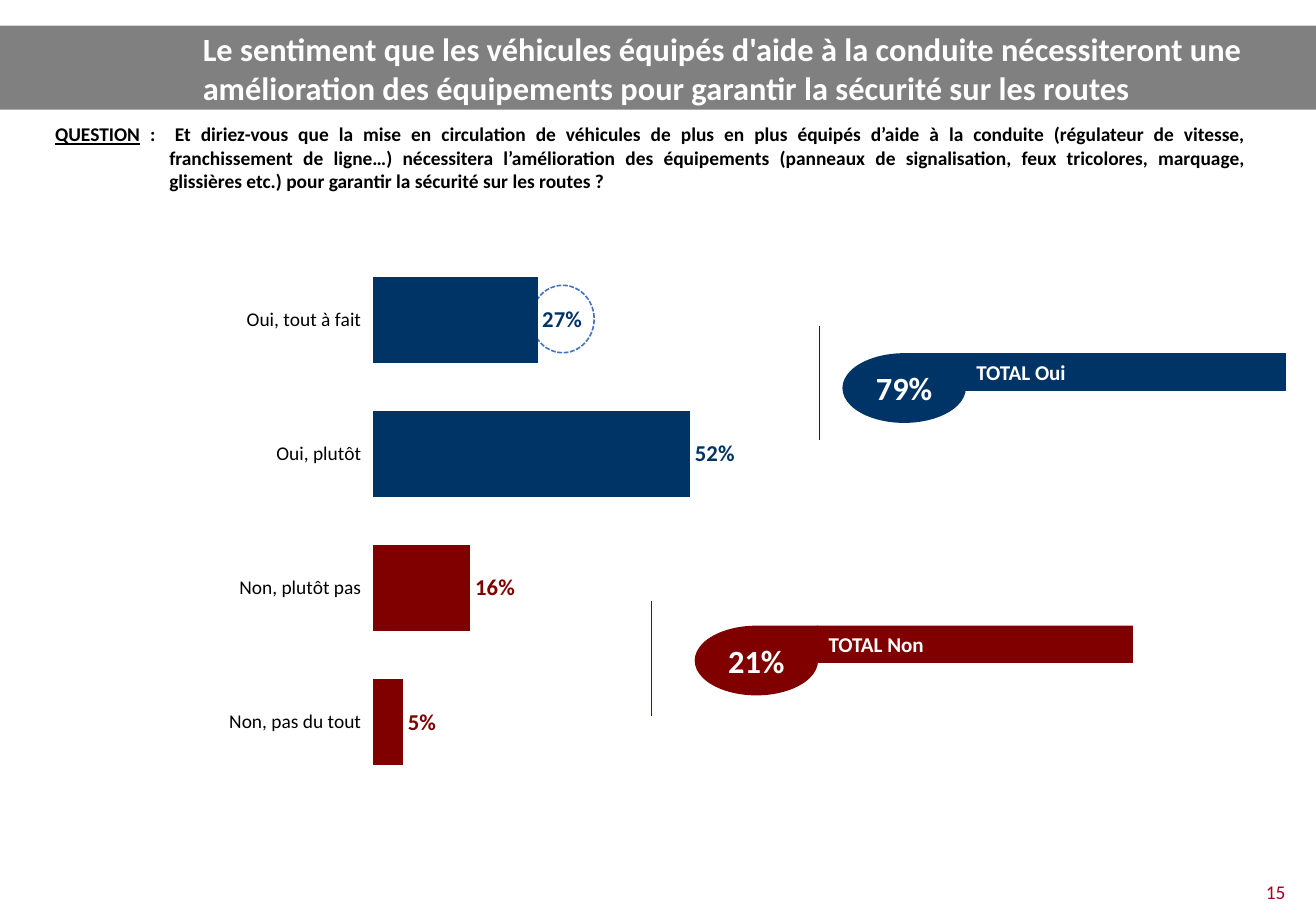
from lxml import etree
from pptx import Presentation
from pptx.chart.data import CategoryChartData as Data
from pptx.dml.color import RGBColor
from pptx.enum.chart import XL_CHART_TYPE as Kind, XL_LABEL_POSITION as Pos, XL_TICK_MARK as Tick
from pptx.enum.dml import MSO_LINE as Dash
from pptx.enum.shapes import MSO_CONNECTOR as Link, MSO_SHAPE as Form
from pptx.enum.text import MSO_ANCHOR as Anchor, PP_ALIGN as Align
from pptx.oxml import parse_xml
from pptx.oxml.ns import qn
from pptx.util import Cm, Pt

NAVY = RGBColor(0x00, 0x33, 0x66)
INK = RGBColor(0x00, 0x20, 0x60)
RED = RGBColor(0x80, 0x00, 0x00)
ROSE = RGBColor(0xA5, 0x00, 0x21)
BLUE = RGBColor(0x44, 0x72, 0xC4)
GREY = RGBColor(0x80, 0x80, 0x80)
WHITE = RGBColor(0xFF, 0xFF, 0xFF)
BLACK = RGBColor(0x00, 0x00, 0x00)

TITLE = ("Le sentiment que les véhicules équipés d'aide à la conduite nécessiteront une "
         "amélioration des équipements pour garantir la sécurité sur les routes")
QUERY = (" :\tEt diriez-vous que la mise en circulation de véhicules de plus en plus équipés "
         "d’aide à la conduite (régulateur de vitesse, franchissement de ligne…) nécessitera "
         "l’amélioration des équipements (panneaux de signalisation, feux tricolores, marquage, "
         "glissières etc.) pour garantir la sécurité sur les routes ?")
BARS = [("Oui, tout à fait", 0.27, NAVY), ("Oui, plutôt", 0.52, NAVY),
        ("Non, plutôt pas", 0.16, RED), ("Non, pas du tout", 0.05, RED)]
PLOT = {"xMode": "edge", "yMode": "edge", "x": 0.304, "y": 0, "w": 0.623, "h": 0.999}


def style(font, size, color, **more):
    """Apply format values to a font."""
    for key, val in {"name": "Calibri", "size": Pt(size), **more}.items():
        setattr(font, key, val)
    font.color.rgb = color


def write(shape, text, size, color, align=Align.LEFT, **more):
    """Put one styled run in a shape and return its paragraph."""
    frame = shape.text_frame
    for key, val in {"word_wrap": True, "vertical_anchor": Anchor.MIDDLE}.items():
        setattr(frame, key, val)
    para = frame.paragraphs[0]
    para.alignment = align
    run = para.add_run()
    run.text = text
    style(run.font, size, color, **more)
    return para


def add_box(slide, box):
    """Add a text box at left, top, width and height."""
    return slide.shapes.add_textbox(*map(Cm, box))


def add_form(slide, form, box, fill, line=None, width=0.75):
    """Add a flat filled shape with an optional outline."""
    shape = slide.shapes.add_shape(form, *map(Cm, box))
    shape.shadow.inherit = False
    shape.fill.solid()
    shape.fill.fore_color.rgb = fill
    if line is None:
        shape.line.fill.background()
    else:
        shape.line.color.rgb = line
        shape.line.width = Pt(width)
    return shape


def add_rule(slide, left, top, color):
    """Add a thin upright line beside a group of bars."""
    rule = slide.shapes.add_connector(Link.STRAIGHT, *map(Cm, (left, top, left, top + 2.49)))
    rule.line.color.rgb = color
    rule.line.width = Pt(0.5)
    etree.SubElement(rule.element.spPr, qn("a:effectLst"))


def add_total(slide, left, top, width, color, share, label, edge=None):
    """Add a drop with a share and the band that names it."""
    band = add_form(slide, Form.RECTANGLE, (left + 2.67, top, width, 0.81), color, edge)
    write(band, label, 13, WHITE, bold=True)
    drop = add_form(slide, Form.TEAR, (left, top, 2.69, 1.52), color)
    write(drop, share, 20, WHITE, Align.CENTER, bold=True)


def add_query(slide):
    """Add the survey question with its hanging indent."""
    box = add_box(slide, (0.97, 2.57, 27.1, 1.75))
    para = write(box, "QUESTION", 12, BLACK, Align.JUSTIFY, bold=True, underline=True)
    frame = box.text_frame
    for key, val in {"margin_left": Cm(0.23), "margin_right": Cm(0.91), "margin_top": Cm(0.1),
                     "margin_bottom": Cm(0.1), "vertical_anchor": Anchor.TOP}.items():
        setattr(frame, key, val)
    props = para._p.get_or_add_pPr()
    props.set("marL", str(Cm(2.49)))
    props.set("indent", str(-Cm(2.49)))
    run = para.add_run()
    run.text = QUERY
    style(run.font, 12, BLACK, bold=True, underline=False)


def set_plot(chart):
    """Fix the inner plot area of a chart."""
    parts = "".join(f'<c:{key} val="{val}"/>' for key, val in PLOT.items())
    area = chart.element.find(".//" + qn("c:plotArea"))
    old = area.find(qn("c:layout"))
    if old is not None:
        area.remove(old)
    area.insert(0, parse_xml(
        '<c:layout xmlns:c="http://schemas.openxmlformats.org/drawingml/2006/chart">'
        f'<c:manualLayout><c:layoutTarget val="inner"/>{parts}</c:manualLayout></c:layout>'))


def add_bars(slide):
    """Add the bar chart of answers."""
    data = Data(number_format="0%")
    data.categories = [name for name, _, _ in BARS]
    data.add_series("Réponses", [val for _, val, _ in BARS])
    box = map(Cm, (1.63, 5.51, 21.36, 11.71))
    chart = slide.shapes.add_chart(Kind.BAR_CLUSTERED, *box, data).chart
    chart.has_legend = chart.has_title = False
    style(chart.font, 18, BLACK)
    set_plot(chart)

    axis = chart.category_axis
    for key, val in {"reverse_order": True, "has_major_gridlines": False,
                     "major_tick_mark": Tick.OUTSIDE}.items():
        setattr(axis, key, val)
    axis.format.line.fill.background()
    style(axis.tick_labels.font, 12, BLACK)
    for key, val in {"minimum_scale": 0, "maximum_scale": 1, "visible": False,
                     "has_major_gridlines": False}.items():
        setattr(chart.value_axis, key, val)

    plot = chart.plots[0]
    for key, val in {"gap_width": 55, "vary_by_categories": False,
                     "has_data_labels": True}.items():
        setattr(plot, key, val)
    series = plot.series[0]
    labels = series.data_labels
    for key, val in {"show_value": True, "number_format": "0%",
                     "number_format_is_linked": False, "position": Pos.OUTSIDE_END}.items():
        setattr(labels, key, val)
    style(labels.font, 14, NAVY, bold=True)
    for rank, (_, _, color) in enumerate(BARS):
        point = series.points[rank]
        point.format.fill.solid()
        point.format.fill.fore_color.rgb = color
        if color != NAVY:
            style(point.data_label.font, 14, color, bold=True)
            point.data_label.position = Pos.OUTSIDE_END


def main():
    """Build the slide and save it."""
    deck = Presentation()
    deck.slide_width, deck.slide_height = Cm(28.68), Cm(19.99)
    slide = deck.slides.add_slide(deck.slide_layouts[6])
    add_form(slide, Form.RECTANGLE, (0, 0.56, 28.68, 1.83), GREY)
    write(add_box(slide, (26.95, 19.05, 1.7, 0.76)), "15", 12, ROSE, Align.CENTER)
    ring = add_form(slide, Form.OVAL, (11.58, 6.22, 1.37, 1.47), WHITE, BLUE, 1)
    ring.line.dash_style = Dash.SQUARE_DOT
    write(add_box(slide, (4.17, 0.56, 24.08, 1.83)), TITLE, 20, WHITE, bold=True)
    add_query(slide)
    add_bars(slide)
    add_rule(slide, 17.86, 7.11, INK)
    add_rule(slide, 14.2, 13.11, RED)
    add_total(slide, 18.36, 7.7, 6.99, NAVY, "79%", "TOTAL Oui", NAVY)
    add_total(slide, 15.14, 13.64, 6.88, RED, "21%", "TOTAL Non")
    deck.save("out.pptx")


if __name__ == "__main__":
    main()
